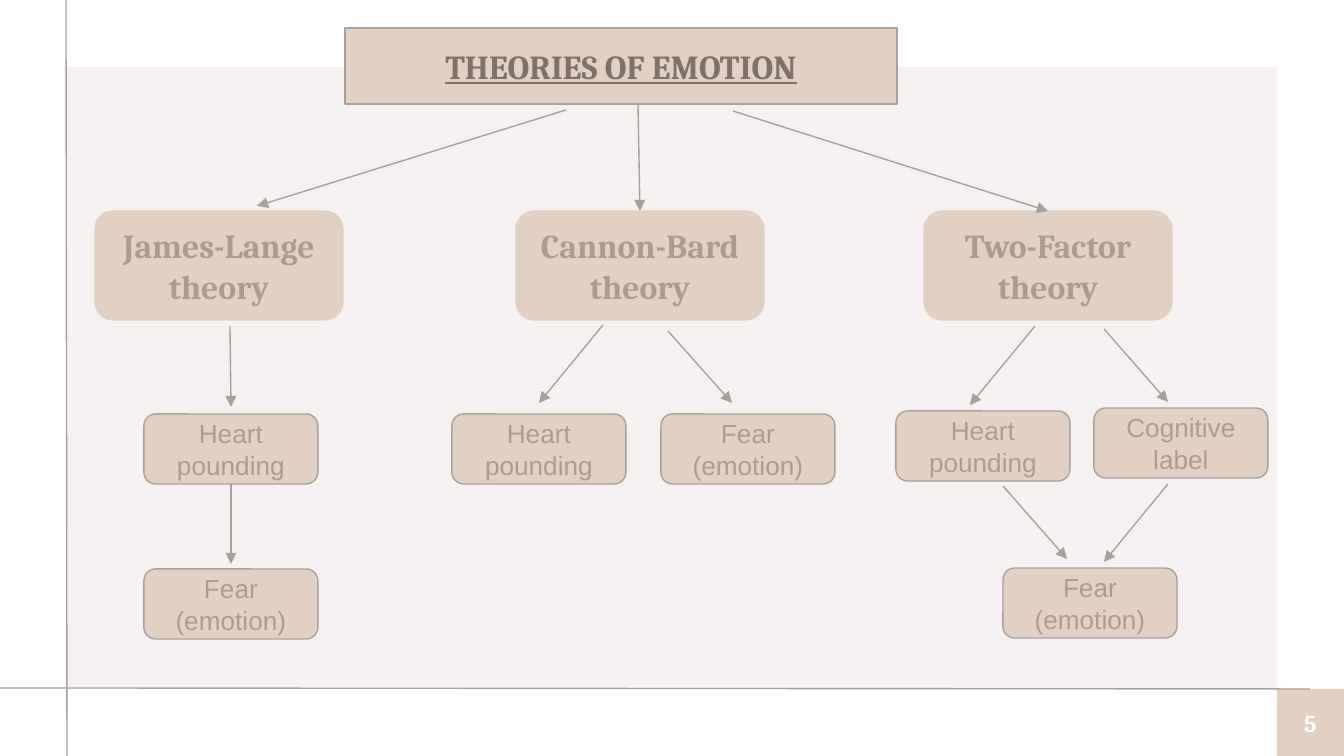
from lxml.etree import SubElement
from pptx import Presentation
from pptx.dml.color import RGBColor as RGB
from pptx.enum.shapes import MSO_CONNECTOR as LINK, MSO_SHAPE as SHAPE
from pptx.enum.text import MSO_ANCHOR as ANCHOR, MSO_AUTO_SIZE as AUTO, PP_ALIGN as ALIGN
from pptx.oxml.ns import qn
from pptx.util import Pt

SCALE = 914400 / 134.4
SAND, GREY, BROWN, DARK = "E2D1C2", "A8A09D", "AD9B91", "7E7169"
WHITE, BACK = "FFFFFF", "F5F1F0"


def px(n):
    return round(n * SCALE)


def color(code):
    return RGB.from_string(code)


def paint(shape, fill, edge=None):
    shape.fill.solid()
    shape.fill.fore_color.rgb = color(fill)
    if edge:
        shape.line.color.rgb = color(edge)
        shape.line.width = Pt(0.75)
    else:
        shape.line.fill.background()


def write(shape, text, size, face, ink, bold=False, under=False, inset=13):
    frame = shape.text_frame
    frame.text = text
    frame.word_wrap = True
    frame.auto_size = AUTO.NONE
    frame.vertical_anchor = ANCHOR.MIDDLE
    frame.margin_left = frame.margin_right = px(inset)
    frame.margin_top = frame.margin_bottom = px(inset)
    para = frame.paragraphs[0]
    para.alignment = ALIGN.CENTER
    font = para.runs[0].font
    font.size, font.name, font.bold = Pt(size), face, bold
    font.underline = under
    font.color.rgb = color(ink)


def block(slide, kind, x, y, w, h, fill, edge=None):
    shape = slide.shapes.add_shape(kind, px(x), px(y), px(w), px(h))
    shape.shadow.inherit = False
    paint(shape, fill, edge)
    return shape


def head(slide, text):
    title = slide.shapes.title
    title.left, title.top = px(345), px(28)
    title.width, title.height = px(552), px(76)
    geom = SubElement(title.element.spPr, qn("a:prstGeom"), prst="roundRect")
    SubElement(geom, qn("a:avLst"))
    paint(title, SAND, GREY)
    write(title, text, 18, "Cambria", DARK, bold=True, under=True)


def theory(slide, x, text):
    box = block(slide, SHAPE.ROUNDED_RECTANGLE, x, 211, 248, 109, SAND, SAND)
    write(box, text, 18, "Cambria", BROWN, bold=True)
    return box


def step(slide, x, y, text):
    box = block(slide, SHAPE.ROUNDED_RECTANGLE, x, y, 174, 70, SAND, GREY)
    write(box, text, 14, "Arial", BROWN)
    return box


def line(slide, x1, y1, x2, y2):
    rule = slide.shapes.add_connector(LINK.STRAIGHT, px(x1), px(y1), px(x2), px(y2))
    rule.line.color.rgb = color(GREY)
    rule.line.width = Pt(0.75)
    SubElement(rule.element.spPr, qn("a:effectLst"))
    return rule


def arrow(slide, *ends):
    link = line(slide, *ends)
    SubElement(link.line._get_or_add_ln(), qn("a:tailEnd"), type="triangle")
    return link


def main():
    deck = Presentation()
    deck.slide_width, deck.slide_height = px(1344), px(756)
    slide = deck.slides.add_slide(deck.slide_layouts[5])
    slide.background.fill.solid()
    slide.background.fill.fore_color.rgb = color(BACK)

    border = block(slide, SHAPE.FRAME, 0, 0, 1344, 756, WHITE)
    border.adjustments[0] = 0.09
    border.adjustments[0] = 67 / 756
    slide.shapes.title.element.addprevious(border.element)
    head(slide, "THEORIES OF EMOTION")

    theory(slide, 95, "James-Lange theory")
    cannon = theory(slide, 516, "Cannon-Bard theory")
    factor = theory(slide, 924, "Two-Factor theory")

    heart, fear = "Heart pounding", "Fear (emotion)"
    first = step(slide, 144, 414, heart)
    for x, y, text in [
        (144, 569, fear),
        (452, 414, heart),
        (661, 414, fear),
        (896, 411, heart),
        (1003, 568, fear),
        (1094, 408, "Cognitive label"),
    ]:
        step(slide, x, y, text)

    arrow(slide, 638, 104, 640, 211).end_connect(cannon, 0)
    arrow(slide, 733, 111, 1048, 211).end_connect(factor, 0)
    arrow(slide, 231, 484, 231, 564).begin_connect(first, 2)
    for ends in [
        (566, 110, 257, 206),
        (230, 326, 231, 407),
        (603, 325, 539, 403),
        (1035, 326, 970, 405),
        (668, 331, 732, 403),
        (1104, 329, 1168, 402),
        (1003, 486, 1067, 559),
        (1168, 484, 1104, 562),
    ]:
        arrow(slide, *ends)

    page = block(slide, SHAPE.RECTANGLE, 1277, 689, 67, 67, SAND)
    write(page, "5", 13, "Cambria", WHITE, bold=True, inset=0)
    line(slide, 66, -1, 67, 757)
    line(slide, 0, 688, 1310, 689)
    deck.save("out.pptx")


if __name__ == "__main__":
    main()
